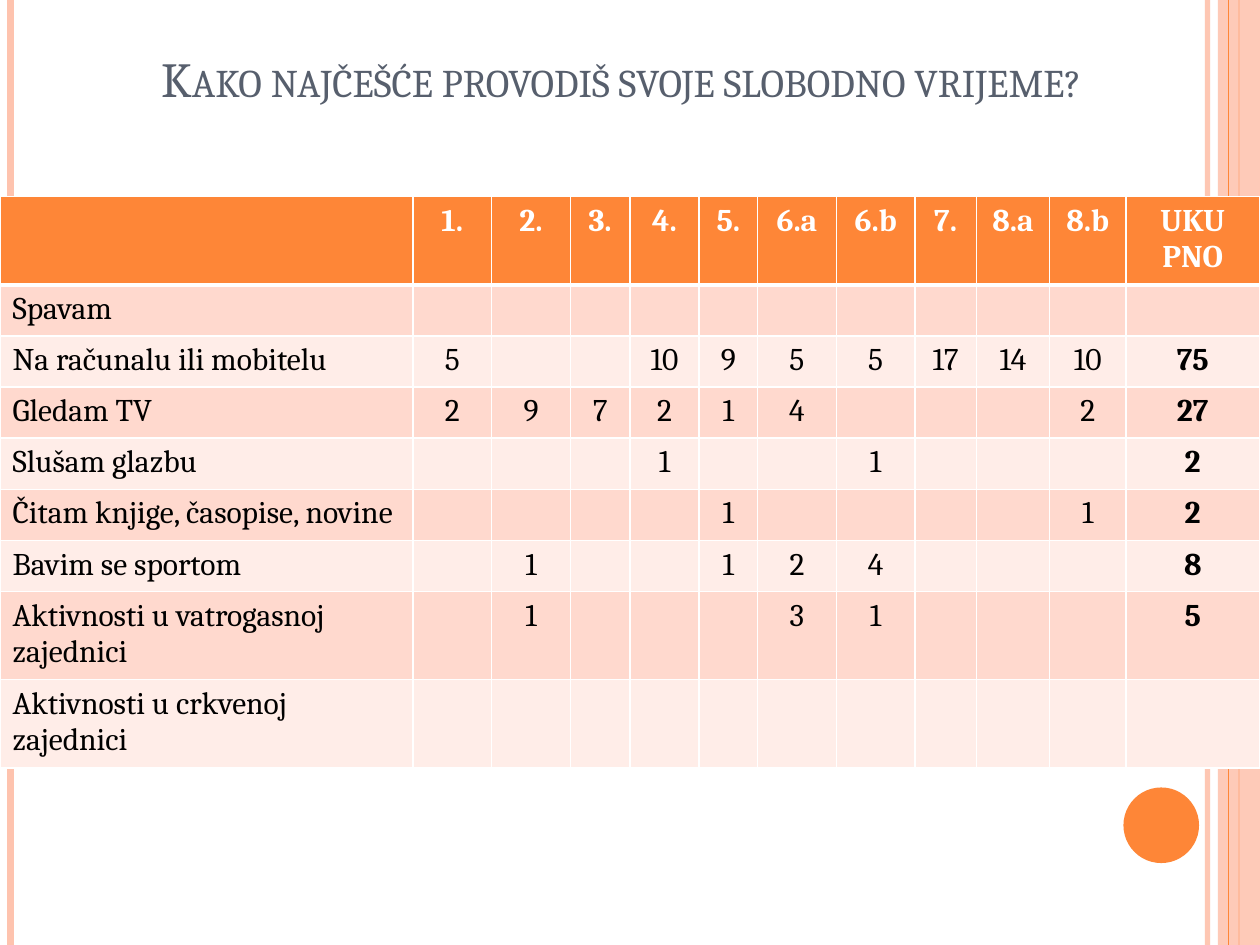
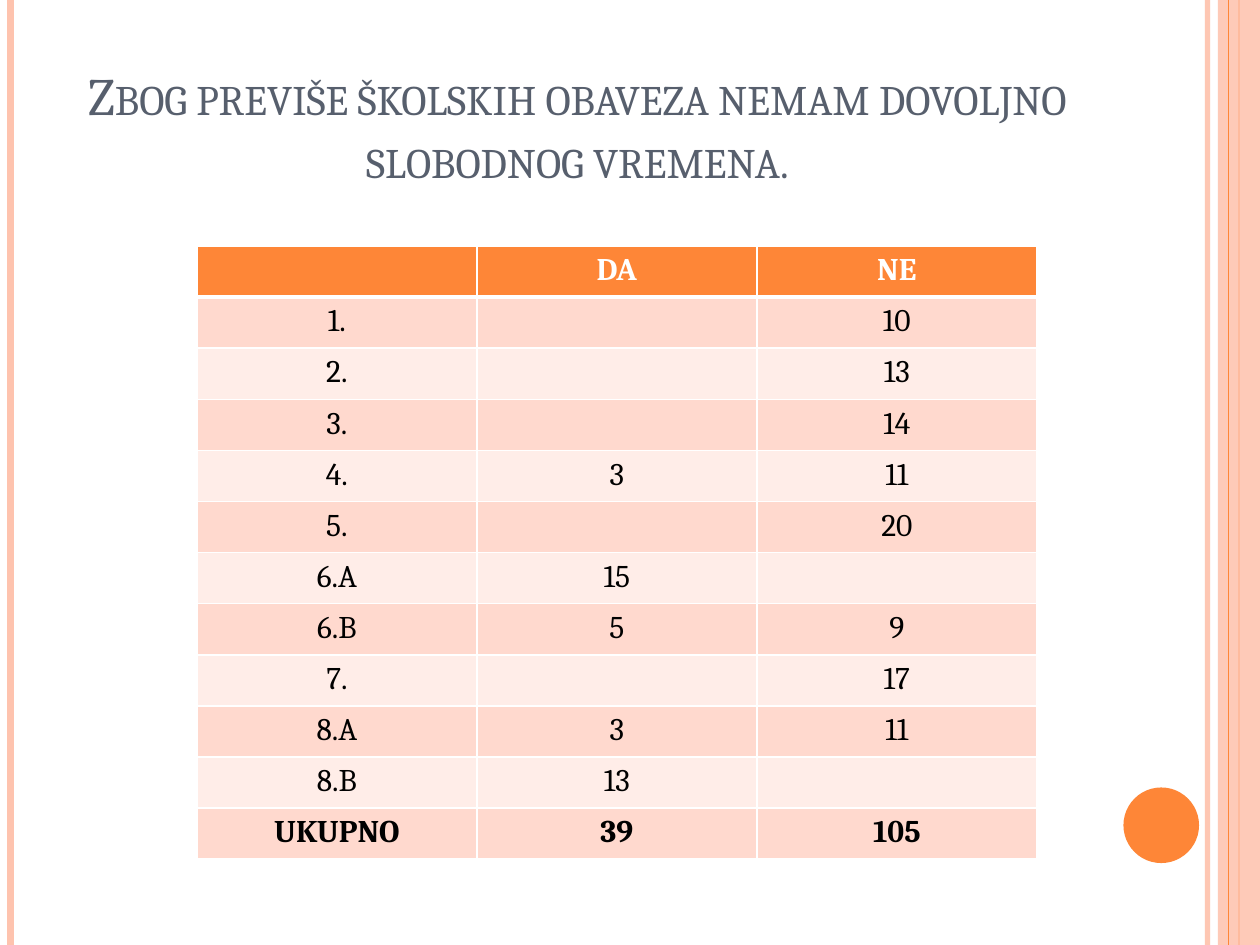
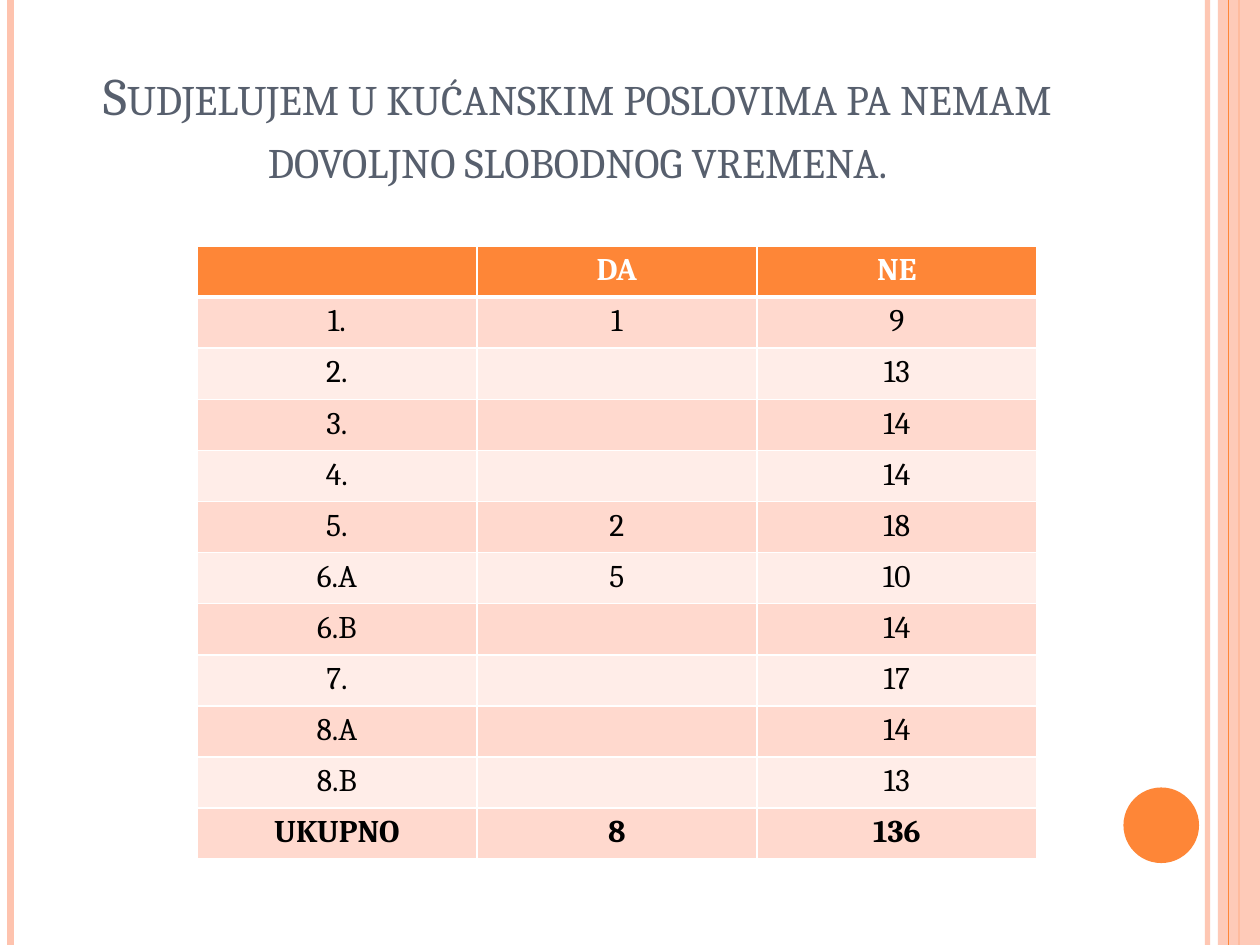
from pptx import Presentation
from pptx.dml.color import RGBColor
from pptx.enum.shapes import MSO_CONNECTOR, MSO_SHAPE
from pptx.enum.text import MSO_ANCHOR, PP_ALIGN
from pptx.oxml.ns import qn
from pptx.util import Pt
from lxml.etree import SubElement

WHITE = RGBColor(0xFF, 0xFF, 0xFF)
BLACK = RGBColor(0x00, 0x00, 0x00)
SLATE = RGBColor(0x57, 0x5F, 0x6D)
ORANGE = RGBColor(0xFE, 0x86, 0x37)
PEACH = RGBColor(0xFE, 0xC3, 0xAE)
BAND_DARK = RGBColor(0xFF, 0xD9, 0xCE)
BAND_LIGHT = RGBColor(0xFF, 0xED, 0xE8)
FONT = "Cambria"
WIDTH, HEIGHT = 720, 540
ROW_HEIGHT = 29.2

ACTIVITIES = [
    ["", "1.", "2.", "3.", "4.", "5.", "6.a", "6.b", "7.", "8.a", "8.b", "UKU\nPNO"],
    ["Spavam", "", "", "", "", "", "", "", "", "", "", ""],
    ["Na računalu ili mobitelu", "5", "", "", "10", "9", "5", "5", "17", "14", "10", "75"],
    ["Gledam TV", "2", "9", "7", "2", "1", "4", "", "", "", "2", "27"],
    ["Slušam glazbu", "", "", "", "1", "", "", "1", "", "", "", "2"],
    ["Čitam knjige, časopise, novine", "", "", "", "", "1", "", "", "", "", "1", "2"],
    ["Bavim se sportom", "", "1", "", "", "1", "2", "4", "", "", "", "8"],
    ["Aktivnosti u vatrogasnoj zajednici", "", "1", "", "", "", "3", "1", "", "", "", "5"],
    ["Aktivnosti u crkvenoj zajednici", "", "", "", "", "", "", "", "", "", "", ""],
]
ACTIVITY_WIDTHS = [236, 45, 45, 34, 39.5, 33.5, 45, 45, 35, 42, 43.5, 76.5]

CLASSES = ["", "1.", "2.", "3.", "4.", "5.", "6.A", "6.B", "7.", "8.A", "8.B", "UKUPNO"]
SCHOOL_YES = ["DA", "", "", "", "3", "", "15", "5", "", "3", "13", "39"]
SCHOOL_NO = ["NE", "10", "13", "14", "11", "20", "", "9", "17", "11", "", "105"]
CHORES_YES = ["DA", "1", "", "", "", "2", "5", "", "", "", "", "8"]
CHORES_NO = ["NE", "9", "13", "14", "14", "18", "10", "14", "17", "14", "13", "136"]

ANSWER_TITLE = dict(title_box=(36, 21.6, 588, 90), title_size=30)
ANSWER_TABLE = dict(corner=(112.5, 140.6), widths=[160] * 3,
                    label_align=PP_ALIGN.CENTER, totals_in_column=False)

SURVEY = [
    dict(title="Kako najčešće provodiš svoje slobodno vrijeme?",
         title_box=(31, -19.4, 648, 84.2), title_size=28,
         rows=ACTIVITIES, corner=(0, 112.4), widths=ACTIVITY_WIDTHS,
         label_align=PP_ALIGN.LEFT, totals_in_column=True),
    dict(title="Zbog previše školskih obaveza nemam dovoljno slobodnog vremena.",
         rows=list(zip(CLASSES, SCHOOL_YES, SCHOOL_NO)), **ANSWER_TITLE, **ANSWER_TABLE),
    dict(title="Sudjelujem u kućanskim poslovima pa nemam dovoljno slobodnog vremena.",
         rows=list(zip(CLASSES, CHORES_YES, CHORES_NO)), **ANSWER_TITLE, **ANSWER_TABLE),
]


def set_opacity(element, percent):
    for color in element.iter(qn("a:srgbClr")):
        SubElement(color, qn("a:alpha"), val=str(percent * 1000))


def add_stripe(slide, x, color, weight, opacity=100):
    """Draw a full-height vertical line."""
    stripe = slide.shapes.add_connector(MSO_CONNECTOR.STRAIGHT, Pt(x), Pt(0), Pt(x), Pt(HEIGHT))
    stripe.line.color.rgb = color
    stripe.line.width = Pt(weight)
    properties = stripe._element.spPr
    if opacity < 100:
        set_opacity(properties, opacity)
    SubElement(properties, qn("a:effectLst"))


prs = Presentation()
prs.slide_width, prs.slide_height = Pt(WIDTH), Pt(HEIGHT)

for question in SURVEY:
    slide = prs.slides.add_slide(prs.slide_layouts[6])
    slide.background.fill.solid()
    slide.background.fill.fore_color.rgb = WHITE

    # Side stripes, right band and dot
    add_stripe(slide, 690, PEACH, 3, 93)
    add_stripe(slide, 6, PEACH, 4.5)
    add_stripe(slide, 708, ORANGE, 1.5)
    band = slide.shapes.add_shape(MSO_SHAPE.RECTANGLE, Pt(696), Pt(0), Pt(24), Pt(HEIGHT))
    add_stripe(slide, 702, ORANGE, 0.75)
    dot = slide.shapes.add_shape(MSO_SHAPE.OVAL, Pt(642), Pt(450), Pt(43.2), Pt(43.2))
    for ornament, color in ((band, PEACH), (dot, ORANGE)):
        ornament.shadow.inherit = False
        ornament.fill.solid()
        ornament.fill.fore_color.rgb = color
        ornament.line.fill.background()
    set_opacity(band._element.spPr, 87)

    # Title
    title = slide.shapes.add_textbox(*map(Pt, question["title_box"])).text_frame
    title.word_wrap = True
    title.vertical_anchor = MSO_ANCHOR.BOTTOM
    title.paragraphs[0].alignment = PP_ALIGN.CENTER
    run = title.paragraphs[0].add_run()
    run.text = question["title"]
    run.font.name, run.font.size = FONT, Pt(question["title_size"])
    run.font.color.rgb = SLATE
    run.font._element.set("cap", "small")

    # Answers table
    rows, widths = question["rows"], question["widths"]
    left, top = question["corner"]
    answers = slide.shapes.add_table(len(rows), len(widths), Pt(left), Pt(top),
                                     Pt(sum(widths)), Pt(ROW_HEIGHT * len(rows))).table
    for column, width in zip(answers.columns, widths):
        column.width = Pt(width)
    for r, row in enumerate(rows):
        answers.rows[r].height = Pt(ROW_HEIGHT)
        for c, text in enumerate(row):
            cell = answers.cell(r, c)
            cell_properties = cell._tc.get_or_add_tcPr()
            weights = {"L": 1, "R": 1, "T": 3 if r == 1 else 1, "B": 3 if r == 0 else 1}
            for side, weight in weights.items():
                border = SubElement(cell_properties, qn(f"a:ln{side}"), w=str(Pt(weight)))
                border_fill = SubElement(border, qn("a:solidFill"))
                SubElement(border_fill, qn("a:srgbClr"), val=str(WHITE))
            cell.fill.solid()
            cell.fill.fore_color.rgb = ORANGE if r == 0 else BAND_DARK if r % 2 else BAND_LIGHT

            if not text:
                continue
            is_total = c == len(row) - 1 if question["totals_in_column"] else r == len(rows) - 1
            for i, line in enumerate(text.split("\n")):
                frame = cell.text_frame
                paragraph = frame.add_paragraph() if i else frame.paragraphs[0]
                paragraph.alignment = question["label_align"] if c == 0 else PP_ALIGN.CENTER
                run = paragraph.add_run()
                run.text = line
                run.font.name, run.font.size = FONT, Pt(18)
                run.font.bold = r == 0 or is_total
                run.font.color.rgb = WHITE if r == 0 else BLACK

prs.save("out.pptx")
